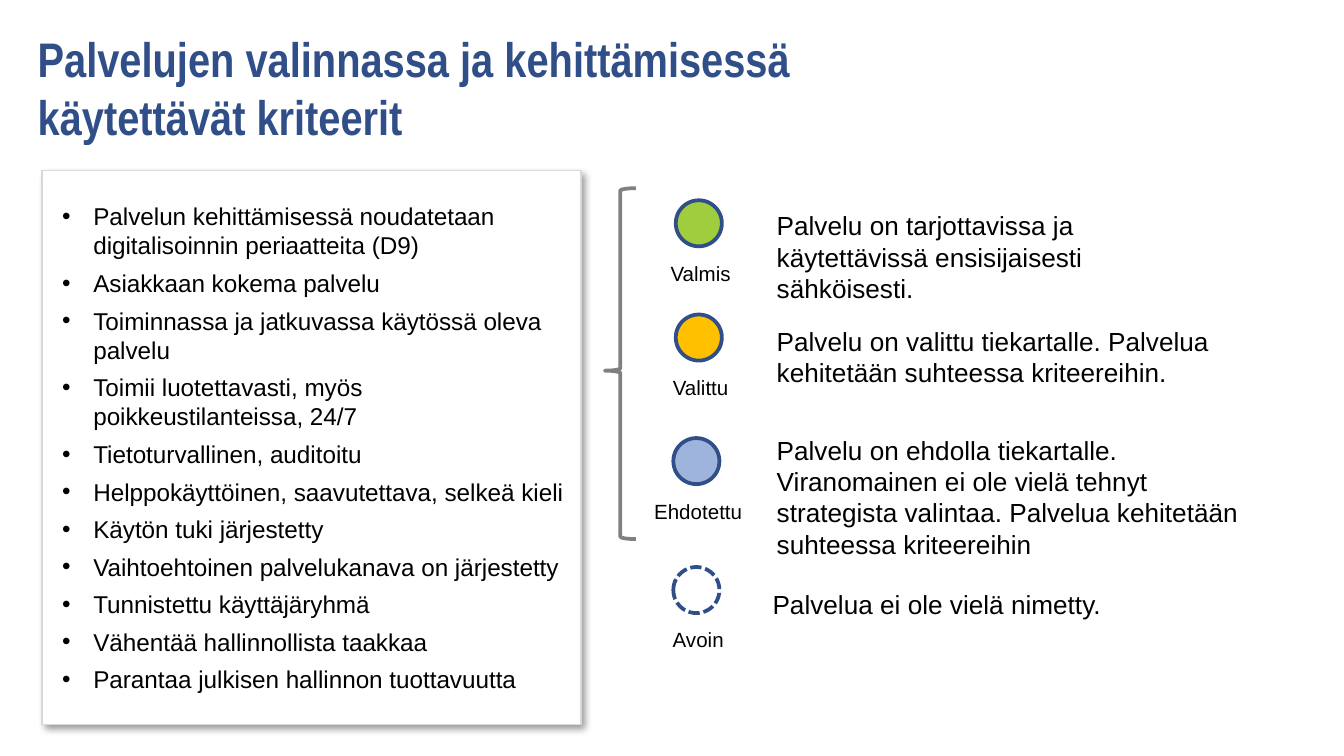
from dataclasses import dataclass

from lxml import etree
from pptx import Presentation
from pptx.dml.color import RGBColor
from pptx.enum.dml import MSO_LINE
from pptx.enum.shapes import MSO_SHAPE
from pptx.enum.text import MSO_ANCHOR, PP_ALIGN
from pptx.oxml import parse_xml
from pptx.oxml.ns import nsdecls, qn
from pptx.util import Pt

RECTANGLE, OVAL, BRACE = MSO_SHAPE.RECTANGLE, MSO_SHAPE.OVAL, MSO_SHAPE.RIGHT_BRACE
DASHED = MSO_LINE.SQUARE_DOT
LEFT, CENTER = PP_ALIGN.LEFT, PP_ALIGN.CENTER
TOP, MIDDLE = MSO_ANCHOR.TOP, MSO_ANCHOR.MIDDLE


@dataclass(frozen=True)
class Theme:
    navy: str = "304E88"
    black: str = "000000"
    white: str = "FFFFFF"
    gray: str = "808080"
    border: str = "D9D9D9"
    green: str = "A0CD3D"
    amber: str = "FFC000"
    blue: str = "9FB4DD"
    body_font: str = "Arial"
    title_font: str = "Arial Narrow"
    title_size: float = 26
    description_size: float = 14
    criteria_size: float = 13
    label_size: float = 11


THEME = Theme()

TITLE = "Palvelujen valinnassa ja kehittämisessä käytettävät kriteerit"
CRITERIA = [
    "Palvelun kehittämisessä noudatetaan digitalisoinnin periaatteita (D9)",
    "Asiakkaan kokema palvelu",
    "Toiminnassa ja jatkuvassa käytössä oleva palvelu",
    "Toimii luotettavasti, myös poikkeustilanteissa, 24/7",
    "Tietoturvallinen, auditoitu",
    "Helppokäyttöinen, saavutettava, selkeä kieli",
    "Käytön tuki järjestetty",
    "Vaihtoehtoinen palvelukanava on järjestetty",
    "Tunnistettu käyttäjäryhmä",
    "Vähentää hallinnollista taakkaa",
    "Parantaa julkisen hallinnon tuottavuutta",
]
# Label, circle fill, circle dash, circle left and top, description, its box
STATUSES = [
    ("Valmis", THEME.green, None, (362, 107.3),
     "Palvelu on tarjottavissa ja käytettävissä ensisijaisesti sähköisesti.",
     (409, 108.7, 250, 59)),
    ("Valittu", THEME.amber, None, (362, 168.5),
     "Palvelu on valittu tiekartalle. Palvelua kehitetään suhteessa kriteereihin.",
     (409, 170.6, 250, 41)),
    ("Ehdotettu", THEME.blue, None, (360.7, 234.7),
     "Palvelu on ehdolla tiekartalle. Viranomainen ei ole vielä tehnyt strategista "
     "valintaa. Palvelua kehitetään suhteessa kriteereihin",
     (409, 229, 279.4, 76.3)),
    ("Avoin", THEME.white, DASHED, (360.7, 303.8),
     "Palvelua ei ole vielä nimetty.",
     (406.8, 311.8, 196.6, 24.5)),
]


def color(value):
    return RGBColor.from_string(value)


def points(box):
    return [Pt(length) for length in box]


def style(paragraph, size, font_color=THEME.black, name=THEME.body_font, bold=False):
    font = paragraph.font
    font.name, font.size, font.bold = name, Pt(size), bold
    font.color.rgb = color(font_color)


def add_text(shapes, box, text, size, align=LEFT, anchor=TOP, inset=7.2, **font):
    frame = shapes.add_textbox(*points(box)).text_frame
    frame.word_wrap = True
    frame.vertical_anchor = anchor
    frame.margin_left = frame.margin_right = Pt(inset)
    frame.margin_top = frame.margin_bottom = Pt(3.6)
    paragraph = frame.paragraphs[0]
    paragraph.text = text
    paragraph.alignment = align
    style(paragraph, size, **font)


def add_outlined(shapes, kind, box, fill, line, width):
    shape = shapes.add_shape(kind, *points(box))
    shape.shadow.inherit = False
    if fill:
        shape.fill.solid()
        shape.fill.fore_color.rgb = color(fill)
    else:
        shape.fill.background()
    shape.line.color.rgb = color(line)
    shape.line.width = Pt(width)
    return shape


def add_drop_shadow(shape):
    effects = shape._element.spPr.find(qn("a:effectLst"))
    effects.append(parse_xml(
        f'<a:outerShdw {nsdecls("a")} blurRad="{Pt(4)}" dist="{Pt(3)}" dir="2700000" '
        f'algn="tl" rotWithShape="0"><a:srgbClr val="{THEME.black}">'
        '<a:alpha val="40000"/></a:srgbClr></a:outerShdw>'))


def add_bullet(paragraph, indent):
    properties = paragraph._p.get_or_add_pPr()
    properties.set("marL", str(Pt(indent)))
    properties.set("indent", str(-Pt(indent)))
    etree.SubElement(properties, qn("a:buFont")).set("typeface", THEME.body_font)
    etree.SubElement(properties, qn("a:buChar")).set("char", "•")


def add_criteria_panel(shapes, box):
    panel = add_outlined(shapes, RECTANGLE, box, THEME.white, THEME.border, 0.75)
    add_drop_shadow(panel)
    frame = panel.text_frame
    frame.word_wrap = True
    frame.vertical_anchor = MIDDLE
    frame.margin_left, frame.margin_right = Pt(10.8), Pt(7.2)
    frame.margin_top = frame.margin_bottom = Pt(3.6)
    for index, text in enumerate(CRITERIA):
        paragraph = frame.add_paragraph() if index else frame.paragraphs[0]
        paragraph.text = text
        paragraph.alignment = LEFT
        paragraph.space_after = Pt(4.5)
        add_bullet(paragraph, 16.7)
        style(paragraph, THEME.criteria_size)


def add_brace(shapes, box):
    """Brace that opens to the right, towards the statuses."""
    brace = add_outlined(shapes, BRACE, box, None, THEME.gray, 2)
    brace.rotation = 180
    brace.adjustments[0], brace.adjustments[1] = 0.08, 0.48


def add_status_marker(shapes, left, top, label, fill, dash):
    """Circle with its label centred below, grouped."""
    diameter, label_width = 24.7, 73
    group = shapes.add_group_shape().shapes
    circle = add_outlined(group, OVAL, (left, top, diameter, diameter),
                          fill, THEME.navy, 2)
    if dash:
        circle.line.dash_style = dash
    label_left = left + (diameter - label_width) / 2 + 1
    add_text(group, (label_left, top + 28.8, label_width, 20.6), label,
             THEME.label_size, CENTER)


def add_statuses(shapes):
    for label, fill, dash, (left, top), description, box in STATUSES:
        add_status_marker(shapes, left, top, label, fill, dash)
        add_text(shapes, box, description, THEME.description_size)


def main():
    presentation = Presentation()
    presentation.slide_width, presentation.slide_height = Pt(720), Pt(405)
    slide = presentation.slides.add_slide(presentation.slide_layouts[6])
    shapes = slide.shapes
    add_text(shapes, (16.6, 0.7, 523.4, 92.2), TITLE, THEME.title_size,
             anchor=MIDDLE, inset=3.6, font_color=THEME.navy,
             name=THEME.title_font, bold=True)
    add_criteria_panel(shapes, (22.5, 91.5, 288.7, 296.6))
    add_brace(shapes, (324, 100.8, 16.6, 188))
    add_statuses(shapes)
    presentation.save("out.pptx")


if __name__ == "__main__":
    main()
